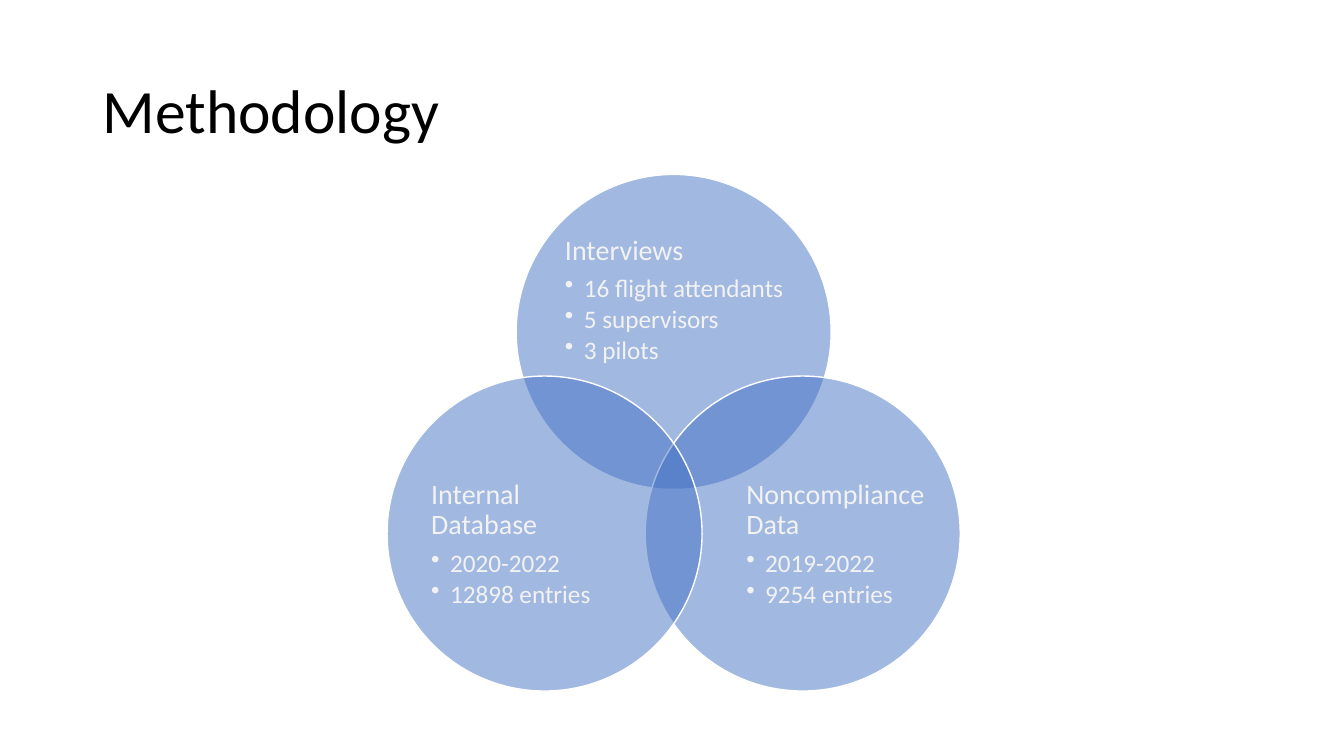
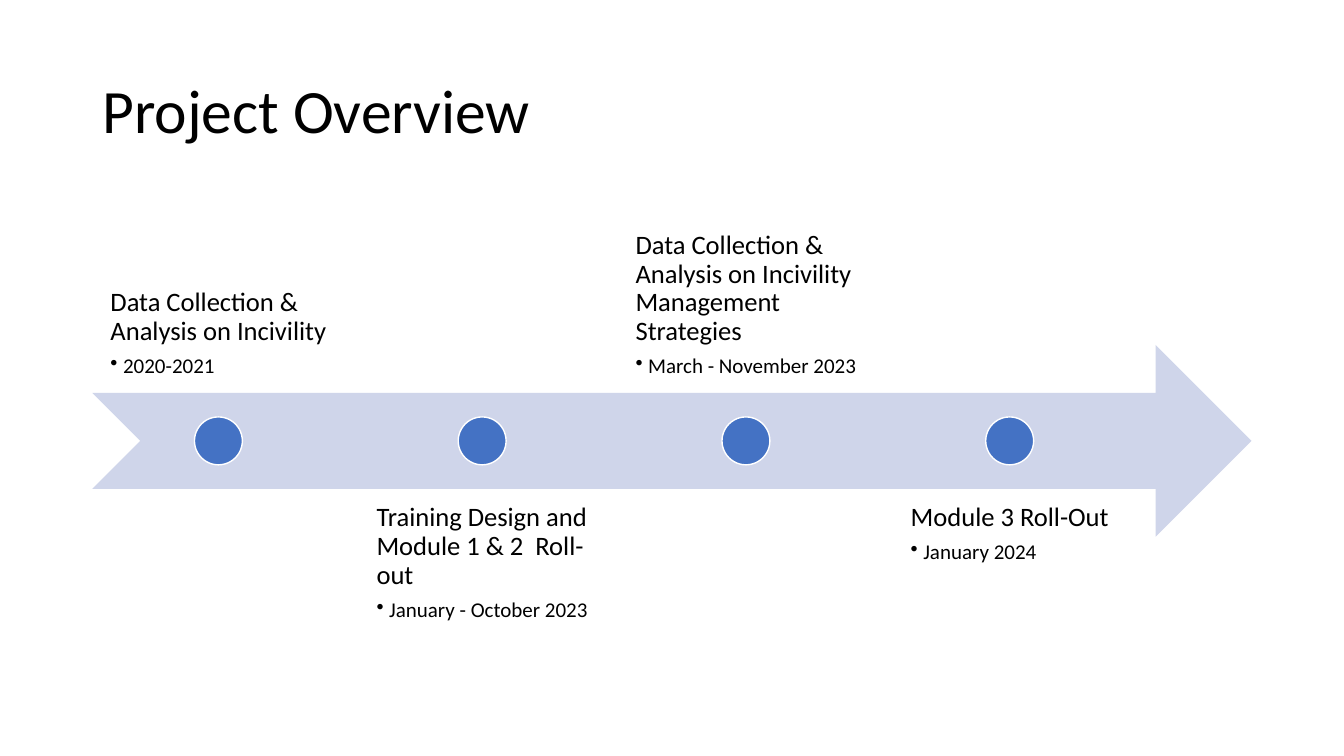
from lxml import etree
from pptx import Presentation
from pptx.dml.color import RGBColor
from pptx.enum.shapes import MSO_SHAPE
from pptx.enum.text import MSO_ANCHOR, PP_ALIGN
from pptx.oxml.ns import qn
from pptx.util import Pt

OVAL, ARROW = MSO_SHAPE.OVAL, MSO_SHAPE.NOTCHED_RIGHT_ARROW
TOP, MIDDLE, BOTTOM = MSO_ANCHOR.TOP, MSO_ANCHOR.MIDDLE, MSO_ANCHOR.BOTTOM
LEFT = PP_ALIGN.LEFT
FONT = "Calibri"
BLUE, PALE, WHITE, GRAY, BLACK = "4472C4", "CFD5EA", "FFFFFF", "F2F2F2", "000000"
color = RGBColor.from_string


def add_form(slide, kind, box, fill, line=None):
    """Add a flat preset shape with an optional 1 pt outline."""
    form = slide.shapes.add_shape(kind, *map(Pt, box))
    form.shadow.inherit = False
    form.fill.solid()
    form.fill.fore_color.rgb = color(fill)
    if line:
        form.line.color.rgb = color(line)
        form.line.width = Pt(1)
    else:
        form.line.fill.background()
    return form


def add_list(slide, box, head, items, sizes, indent, ink, anchor, inset=0):
    """Add a heading with bullets, centred in its box as one block."""
    text = slide.shapes.add_textbox(*map(Pt, box))
    frame = text.text_frame
    frame.word_wrap = True
    frame.vertical_anchor = anchor
    frame.margin_left = frame.margin_right = Pt(inset)
    frame.margin_top = frame.margin_bottom = Pt(inset)
    text.element.txBody.bodyPr.set("anchorCtr", "1")
    frame.text = "\n".join([head, *items])
    for i, par in enumerate(frame.paragraphs):
        size, gap = (sizes[1], 0.15) if i else (sizes[0], 0.35)
        par.alignment = LEFT
        par.line_spacing = 0.9
        par.space_after = Pt(size * gap)
        par.font.name = FONT
        par.font.size = Pt(size)
        par.font.color.rgb = color(ink)
        if i:
            par.level = 1
            props = par._p.get_or_add_pPr()
            props.set("marL", str(Pt(indent)))
            props.set("indent", str(-Pt(indent)))
            bullet = etree.Element(qn("a:buChar"), char="•")
            props.find(qn("a:spcAft")).addnext(bullet)


deck = Presentation()
deck.slide_width, deck.slide_height = Pt(960), Pt(540)

slides = []
for name in ("Methodology", "Project Overview"):
    slide = deck.slides.add_slide(deck.slide_layouts[5])
    title = slide.shapes.title
    title.left, title.top, title.width, title.height = map(Pt, (66, 28.8, 828, 104.4))
    title.text_frame.text = name
    title.text_frame.vertical_anchor = MIDDLE
    par = title.text_frame.paragraphs[0]
    par.alignment = LEFT
    par.line_spacing = 0.9
    par.font.name = FONT
    par.font.size = Pt(44)
    par.font.color.rgb = color(BLACK)
    slides.append(slide)
method, plan = slides

# Venn diagram: circle corner, text box, heading, bullets
SIZE = 225
sources = [
    (368.7, 124.6, (399, 164.2, 165, 100.8), "Interviews",
     ["16 flight attendants", "5 supervisors", "3 pilots"]),
    (460.9, 268.6, (529.2, 326.9, 135, 123.8), "Noncompliance Data",
     ["2019-2022", "9254 entries"]),
    (276.5, 268.6, (297.4, 326.9, 135, 123.8), "Internal Database",
     ["2020-2022", "12898 entries"]),
]
for x, y, box, head, items in sources:
    circle = add_form(method, OVAL, (x, y, SIZE, SIZE), BLUE, WHITE)
    tint = circle.fill._xPr.find(qn("a:solidFill"))[0]
    etree.SubElement(tint, qn("a:alpha"), val="50000")
    add_list(method, box, head, items, (20, 18), 13.5, GRAY, MIDDLE)

# Timeline: steps sit by turns above and below the arrow
HIGH, WIDE, STEP, DOT = 137, 179.4, 188.4, 34.2
FIRST, MID = 156, 314.9
steps = [
    ("Data Collection & Analysis on Incivility", "2020-2021"),
    ("Training Design and Module 1 & 2  Roll-out", "January - October 2023"),
    ("Data Collection & Analysis on Incivility Management Strategies",
     "March - November 2023"),
    ("Module 3 Roll-Out", "January 2024"),
]
add_form(plan, ARROW, (66, MID - HIGH / 2, 828, HIGH), PALE)
for i, (head, date) in enumerate(steps):
    x = FIRST + i * STEP
    y, anchor = (349.2, TOP) if i % 2 else (143.8, BOTTOM)
    add_list(plan, (x - WIDE / 2, y, WIDE, HIGH), head, [date],
             (19, 15), 9, BLACK, anchor, 10.6)
    add_form(plan, OVAL, (x - DOT / 2, MID - DOT / 2, DOT, DOT), BLUE, WHITE)

deck.save("out.pptx")
